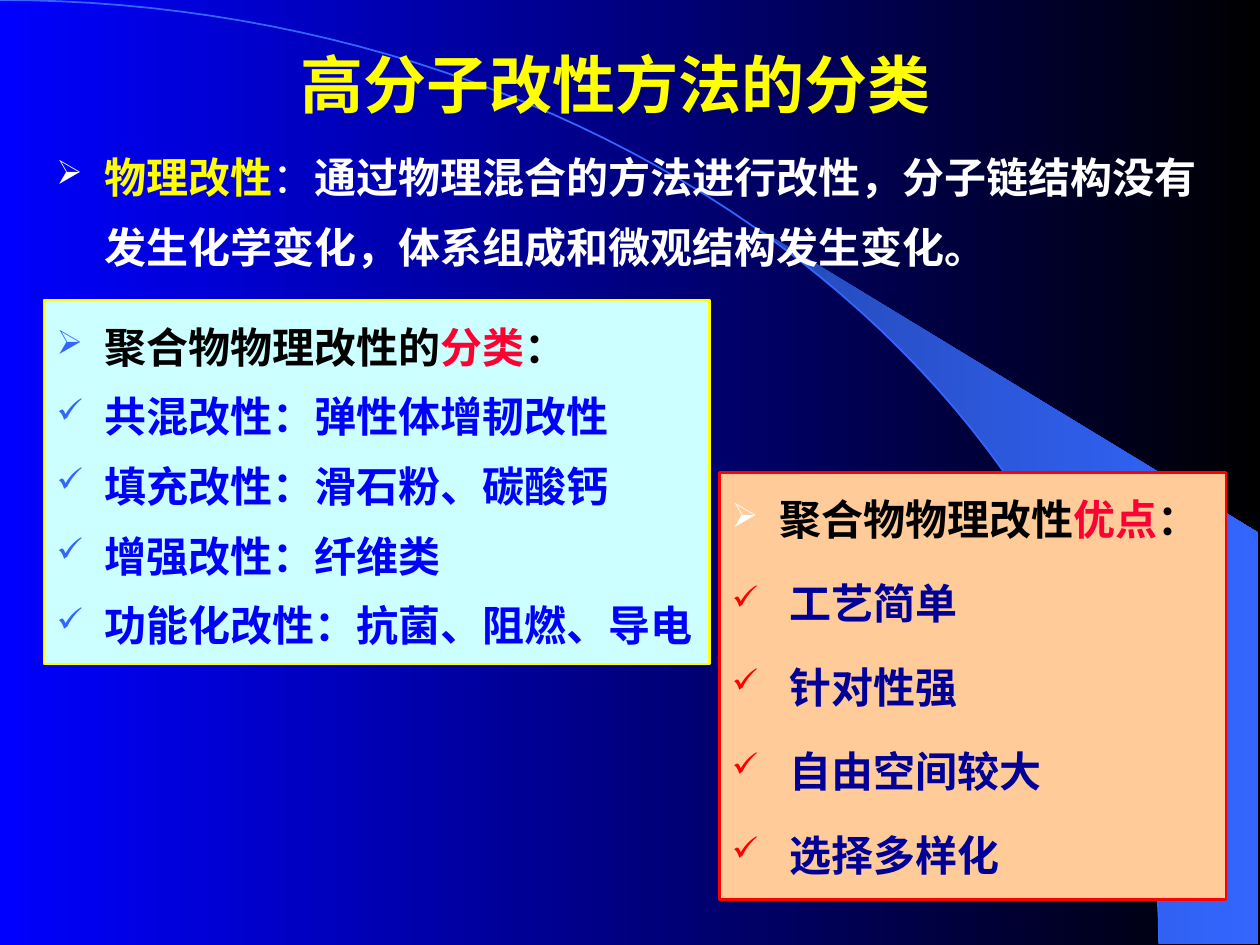
from math import asin, cos, pi, sin

from lxml.etree import SubElement
from pptx import Presentation
from pptx.dml.color import RGBColor
from pptx.enum.shapes import MSO_SHAPE
from pptx.enum.text import MSO_ANCHOR, PP_ALIGN
from pptx.oxml.ns import qn
from pptx.util import Inches, Pt

WIDTH, HEIGHT = 10, 7.5
LATIN, CJK = "Times New Roman", "Noto Sans CJK SC"

BLUE = RGBColor(0x00, 0x00, 0xFF)
BLACK = RGBColor(0x00, 0x00, 0x00)
WHITE = RGBColor(0xFF, 0xFF, 0xFF)
YELLOW = RGBColor(0xFF, 0xFF, 0x00)
RED = RGBColor(0xFF, 0x00, 0x00)
CRIMSON = RGBColor(0xFF, 0x00, 0x33)
NAVY = RGBColor(0x00, 0x00, 0x99)
SKY = RGBColor(0x33, 0x66, 0xFF)
DUSK = RGBColor(0x24, 0x49, 0xB6)
PEACH = RGBColor(0xFF, 0xCC, 0x99)
ICE = RGBColor(0xCC, 0xFF, 0xFF)

ARROW, CHECK = "➢", "✓"

# A line of text is a list of runs: (text, colour, bold)
TITLE = [("高分子改性方法的分类", YELLOW, True)]
DEFINITION = [
    ("物理改性", YELLOW, True),
    ("：", WHITE, False),
    ("通过物理混合的方法进行改性，分子链结构没有发生化学变化，"
     "体系组成和微观结构发生变化。", WHITE, True),
]
PANELS = [
    dict(area=(5.71, 3.75, 4.02, 3.39), fill=PEACH, line=RED, font=LATIN,
         heading=[("聚合物物理改性", BLACK, True), ("优点", CRIMSON, True), ("：", BLACK, True)],
         items=[" 工艺简单", " 针对性强", " 自由空间较大", " 选择多样化"],
         item_color=NAVY, marks=(WHITE, RED), spacing=1.5, before=20),
    dict(area=(0.35, 2.38, 5.28, 2.89), fill=ICE, line=YELLOW, font=CJK,
         heading=[("聚合物物理改性的", BLACK, True), ("分类", CRIMSON, True), ("：", BLACK, True)],
         items=["共混改性：弹性体增韧改性", "填充改性：滑石粉、碳酸钙",
                "增强改性：纤维类", "功能化改性：抗菌、阻燃、导电"],
         item_color=BLUE, marks=(SKY, SKY), spacing=1.3, before=10),
]

# Quarter ellipse sweeping from the top left corner to the bottom edge
ARC_WIDTH, ARC_HEIGHT = 9.2, 7.49
WEDGE_TIP = 5.89
WEDGE_RIGHT, WEDGE_SHOULDER = 9.99, 4.23


def arc_points(start, steps):
    """Points along the quarter ellipse, from angle start to its lower end."""
    angles = [start + (pi / 2 - start) * step / steps for step in range(steps + 1)]
    return [(ARC_WIDTH * sin(a), ARC_HEIGHT * (1 - cos(a))) for a in angles]


def shade(fill, first, last):
    fill.gradient()
    fill.gradient_angle = 0
    for stop, color in zip(fill.gradient_stops, (first, last)):
        stop.color.rgb = color


def add_outline(slide, points, close):
    points = [(Inches(x), Inches(y)) for x, y in points]
    builder = slide.shapes.build_freeform(*points[0])
    builder.add_line_segments(points[1:], close=close)
    shape = builder.convert_to_shape()
    shape.shadow.inherit = False
    return shape


def set_bullet(para, mark, color):
    props = para._p.get_or_add_pPr()
    props.set("marL", str(Inches(0.38)))
    props.set("indent", str(-Inches(0.38)))
    tint = SubElement(props, qn("a:buClr"))
    SubElement(tint, qn("a:srgbClr")).set("val", str(color))
    SubElement(props, qn("a:buSzPct")).set("val", "80000")
    SubElement(props, qn("a:buChar")).set("char", mark)


def set_space_before(para, percent):
    """Space before the paragraph as a share of the text size."""
    para.space_before = Pt(0)
    space = para._p.pPr.find(qn("a:spcBef"))
    space.remove(space[0])
    SubElement(space, qn("a:spcPct")).set("val", str(percent * 1000))


def write(para, runs, font=CJK, size=24, spacing=1.0, before=0,
          align=PP_ALIGN.LEFT, mark=None, mark_color=WHITE):
    para.alignment = align
    para.line_spacing = spacing
    set_space_before(para, before)
    if mark:
        set_bullet(para, mark, mark_color)
    for text, color, bold in runs:
        span = para.add_run()
        span.text = text
        span.font.name = font
        span.font.size = Pt(size)
        span.font.bold = bold
        span.font.color.rgb = color
        SubElement(span._r.rPr, qn("a:ea")).set("typeface", CJK)


def add_text(slide, area, runs, **style):
    box = slide.shapes.add_textbox(*map(Inches, area))
    box.text_frame.word_wrap = True
    write(box.text_frame.paragraphs[0], runs, **style)


def add_panel(slide, panel):
    box = slide.shapes.add_shape(MSO_SHAPE.RECTANGLE, *map(Inches, panel["area"]))
    box.shadow.inherit = False
    box.fill.solid()
    box.fill.fore_color.rgb = panel["fill"]
    box.line.color.rgb = panel["line"]
    box.line.width = Pt(1.5)
    frame = box.text_frame
    frame.word_wrap = True
    frame.vertical_anchor = MSO_ANCHOR.TOP
    style = dict(font=panel["font"], before=panel["before"])
    heading_mark, item_mark = panel["marks"]
    write(frame.paragraphs[0], panel["heading"], spacing=1.3,
          mark=ARROW, mark_color=heading_mark, **style)
    for item in panel["items"]:
        write(frame.add_paragraph(), [(item, panel["item_color"], True)],
              spacing=panel["spacing"], mark=CHECK, mark_color=item_mark, **style)


def main():
    deck = Presentation()
    deck.slide_width, deck.slide_height = Inches(WIDTH), Inches(HEIGHT)
    slide = deck.slides.add_slide(deck.slide_layouts[6])
    shade(slide.background.fill, BLUE, BLACK)

    edge = arc_points(asin(WEDGE_TIP / ARC_WIDTH), 24)
    corners = [(WEDGE_RIGHT, ARC_HEIGHT), (WEDGE_RIGHT, WEDGE_SHOULDER)]
    wedge = add_outline(slide, edge + corners, close=True)
    shade(wedge.fill, DUSK, SKY)
    wedge.line.fill.background()

    arc = add_outline(slide, arc_points(0, 60), close=False)
    arc.fill.background()
    arc.line.color.rgb = SKY
    arc.line.width = Pt(1)

    for panel in PANELS:
        add_panel(slide, panel)
    add_text(slide, (0.35, 0.99, 9.37, 1.15), DEFINITION, spacing=1.4, mark=ARROW)
    add_text(slide, (0.2, 0.19, 9.37, 0.73), TITLE, font=LATIN, size=36,
             spacing=1.2, before=20, align=PP_ALIGN.CENTER)
    deck.save("out.pptx")


if __name__ == "__main__":
    main()
